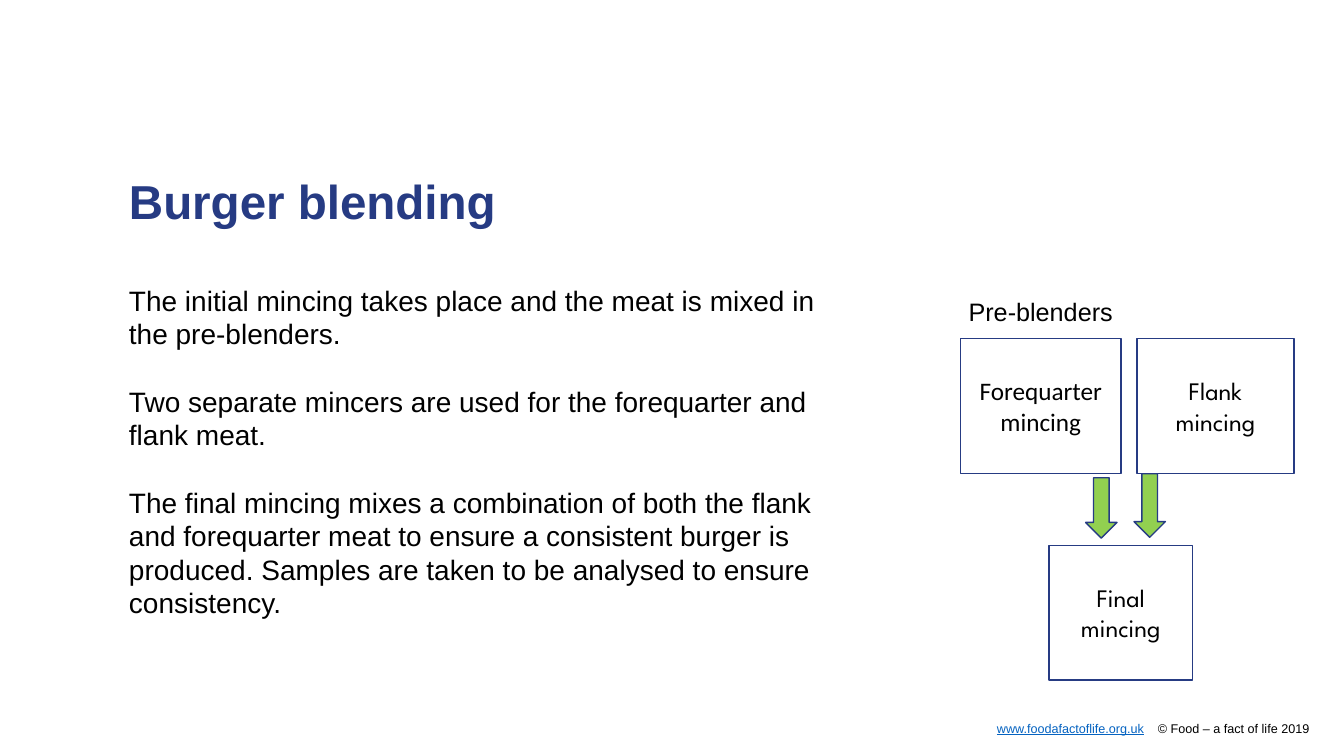
from dataclasses import dataclass

from pptx import Presentation
from pptx.dml.color import RGBColor
from pptx.enum.shapes import MSO_SHAPE
from pptx.enum.text import MSO_ANCHOR, MSO_AUTO_SIZE, PP_ALIGN
from pptx.oxml.ns import qn
from pptx.util import Cm, Pt
from lxml import etree

RECTANGLE, DOWN_ARROW = MSO_SHAPE.RECTANGLE, MSO_SHAPE.DOWN_ARROW
TOP, MIDDLE = MSO_ANCHOR.TOP, MSO_ANCHOR.MIDDLE
LEFT, CENTER = PP_ALIGN.LEFT, PP_ALIGN.CENTER
NO_AUTOFIT = MSO_AUTO_SIZE.NONE


@dataclass(frozen=True)
class Theme:
    navy: RGBColor = RGBColor(0x26, 0x3B, 0x83)
    black: RGBColor = RGBColor(0, 0, 0)
    link: RGBColor = RGBColor(0x05, 0x63, 0xC1)
    green: RGBColor = RGBColor(0x92, 0xD0, 0x50)
    text_face: str = "Arial"
    title_size: int = 34
    body_size: int = 20
    body_pitch: int = 24
    label_size: int = 18
    footer_size: int = 9
    outline: int = 1


class SlideBuilder:
    def __init__(self, deck, theme):
        self.theme = theme
        self.slide = deck.slides.add_slide(deck.slide_layouts[0])

    def style(self, paragraph, size, color, face=None, bold=False):
        font = paragraph.font
        font.name = face or self.theme.text_face
        font.size = Pt(size)
        font.bold = bold
        font.color.rgb = color

    def strip_frame(self, frame):
        """Remove the insets and fix the text to the top of its box."""
        frame.margin_left = frame.margin_right = 0
        frame.margin_top = frame.margin_bottom = 0
        frame.vertical_anchor = TOP
        frame.word_wrap = True
        frame.auto_size = NO_AUTOFIT

    def fill_placeholder(self, holder, box, texts):
        holder.left, holder.top, holder.width, holder.height = map(Cm, box)
        frame = holder.text_frame
        self.strip_frame(frame)
        frame.text = "\n".join(texts)
        for paragraph in frame.paragraphs:
            paragraph.alignment = LEFT
            paragraph.space_before = Pt(0)
        return frame.paragraphs

    def title(self, box, text):
        heading, = self.fill_placeholder(self.slide.shapes.title, box, [text])
        heading.line_spacing = 1.0
        self.style(heading, self.theme.title_size, self.theme.navy, bold=True)

    def body(self, box, texts):
        paragraphs = self.fill_placeholder(self.slide.placeholders[1], box, texts)
        for index, paragraph in enumerate(paragraphs):
            paragraph.line_spacing = Pt(self.theme.body_pitch)
            if index:
                paragraph.space_before = Pt(self.theme.body_pitch)
            self.style(paragraph, self.theme.body_size, self.theme.black)

    def outlined(self, kind, box):
        shape = self.slide.shapes.add_shape(kind, *map(Cm, box))
        shape.shadow.inherit = False
        shape.line.color.rgb = self.theme.navy
        shape.line.width = Pt(self.theme.outline)
        return shape

    def stage(self, box, text, face):
        shape = self.outlined(RECTANGLE, box)
        shape.fill.background()
        frame = shape.text_frame
        frame.word_wrap = True
        frame.vertical_anchor = MIDDLE
        frame.text = text
        caption = frame.paragraphs[0]
        caption.alignment = CENTER
        self.style(caption, self.theme.label_size, self.theme.black, face)

    def arrow(self, box):
        shape = self.outlined(DOWN_ARROW, box)
        shape.fill.solid()
        shape.fill.fore_color.rgb = self.theme.green

    def label(self, box, text):
        frame = self.slide.shapes.add_textbox(*map(Cm, box)).text_frame
        frame.word_wrap = False
        frame.text = text
        self.style(frame.paragraphs[0], self.theme.label_size, self.theme.black)

    def footer(self, box, address, notice, address_end, notice_start):
        """Set the address to end, and the notice to start, at a tab stop."""
        frame = self.slide.shapes.add_textbox(*map(Cm, box)).text_frame
        self.strip_frame(frame)
        line = frame.paragraphs[0]
        line.alignment = LEFT
        tabs = etree.SubElement(line._p.get_or_add_pPr(), qn("a:tabLst"))
        for position, side in ((address_end, "r"), (notice_start, "l")):
            etree.SubElement(tabs, qn("a:tab"), pos=str(Cm(position)), algn=side)
        self.style(line, self.theme.footer_size, self.theme.black)
        line.add_run().text = "\t"
        web = line.add_run()
        web.text = address
        web.font.underline = True
        web.font.color.rgb = self.theme.link
        line.add_run().text = "\t" + notice


def main():
    deck = Presentation()
    deck.slide_width, deck.slide_height = Cm(33.87), Cm(19.05)
    page = SlideBuilder(deck, Theme())

    page.footer((3.2, 18.16, 30, 0.38), "www.foodafactoflife.org.uk",
                "© Food – a fact of life 2019", 25.63, 25.98)
    page.title((3.25, 4.34, 27, 2.01), "Burger blending")
    page.body((3.25, 7.14, 18.44, 10.01), [
        "The initial mincing takes place and the meat is mixed in the pre-blenders.",
        "Two separate mincers are used for the forequarter and flank meat.",
        "The final mincing mixes a combination of both the flank and forequarter "
        "meat to ensure a consistent burger is produced. Samples are taken to be "
        "analysed to ensure consistency.",
    ])

    stage_height = 3.4
    for left, top, width, text, face in (
        (24.21, 8.53, 4.04, "Forequarter mincing", "Calibri"),
        (26.44, 13.74, 3.61, "Final mincing", "League Spartan"),
        (28.65, 8.53, 3.96, "Flank mincing", "League Spartan"),
    ):
        page.stage((left, top, width, stage_height), text, face)

    arrow_width = 0.79
    for left, top, height in ((27.36, 12.04, 1.52), (28.58, 11.94, 1.6)):
        page.arrow((left, top, arrow_width, height))
    page.label((24.16, 7.34, 4.19, 1.02), "Pre-blenders")

    deck.save("out.pptx")


if __name__ == "__main__":
    main()
